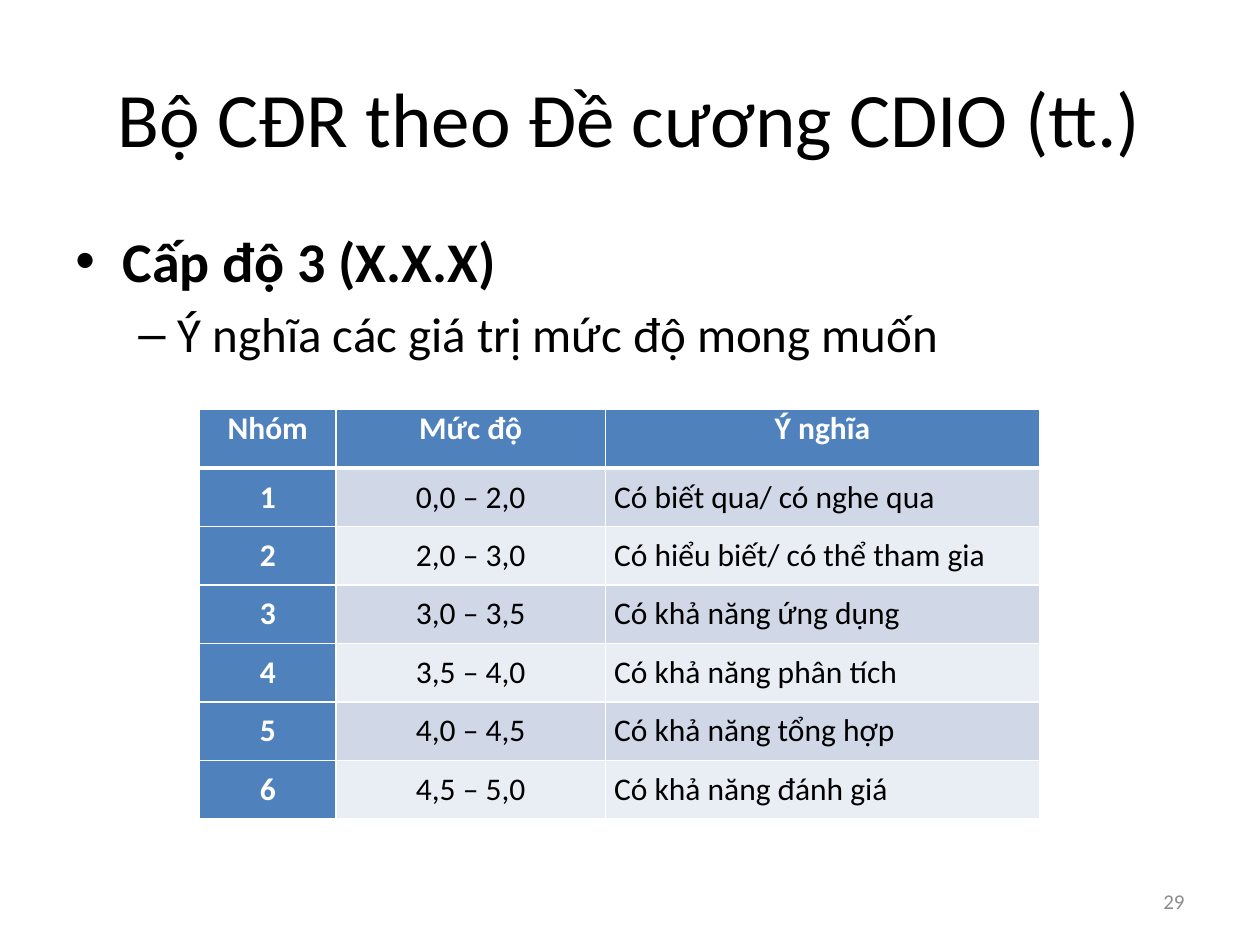
from lxml.etree import SubElement
from pptx import Presentation
from pptx.dml.color import RGBColor
from pptx.enum.text import MSO_ANCHOR as Anchor, PP_ALIGN as Align
from pptx.oxml.ns import qn
from pptx.util import Pt

COLORS = {
    "black": "000000", "white": "FFFFFF", "gray": "8C8C8C",
    "blue": "4F81BD", "odd": "D0D8E8", "even": "E9EDF4",
}


def write(paragraph, text, size, color="black", bold=False, align=Align.LEFT):
    paragraph.alignment = align
    run = paragraph.add_run()
    run.text = text
    for name, value in {"name": "Calibri", "size": Pt(size), "bold": bold}.items():
        setattr(run.font, name, value)
    run.font.color.rgb = RGBColor.from_string(COLORS[color])


def add_text_frame(left, top, width, height, anchor):
    box = slide.shapes.add_textbox(Pt(left), Pt(top), Pt(width), Pt(height))
    for name, value in {"word_wrap": True, "vertical_anchor": anchor}.items():
        setattr(box.text_frame, name, value)
    return box.text_frame


presentation = Presentation()
presentation.slide_width, presentation.slide_height = Pt(720), Pt(540)
slide = presentation.slides.add_slide(presentation.slide_layouts[6])

title = add_text_frame(36, 21.6, 648, 90, Anchor.MIDDLE)
write(title.paragraphs[0], "Bộ CĐR theo Đề cương CDIO (tt.)", 44, align=Align.CENTER)

body = add_text_frame(36, 126, 648, 356.4, Anchor.TOP)
body_lines = [
    ("Cấp độ 3 (X.X.X)", 32, True, "•", 27, -27),
    ("Ý nghĩa các giá trị mức độ mong muốn", 28, False, "–", 58.5, -22.5),
]
for level, (text, size, bold, bullet, margin, indent) in enumerate(body_lines):
    paragraph = body.add_paragraph() if level else body.paragraphs[0]
    paragraph.level = level
    paragraph.space_before = Pt(size * 0.2)
    write(paragraph, text, size, bold=bold)
    properties = paragraph._p.get_or_add_pPr()
    properties.set("marL", str(Pt(margin)))
    properties.set("indent", str(Pt(indent)))
    SubElement(properties, qn("a:buFont"), typeface="Arial")
    SubElement(properties, qn("a:buChar"), char=bullet)

rows = [
    ("Nhóm", "Mức độ", "Ý nghĩa"),
    ("1", "0,0 – 2,0", "Có biết qua/ có nghe qua"),
    ("2", "2,0 – 3,0", "Có hiểu biết/ có thể tham gia"),
    ("3", "3,0 – 3,5", "Có khả năng ứng dụng"),
    ("4", "3,5 – 4,0", "Có khả năng phân tích"),
    ("5", "4,0 – 4,5", "Có khả năng tổng hợp"),
    ("6", "4,5 – 5,0", "Có khả năng đánh giá"),
]
column_widths = [78, 154, 248]
table = slide.shapes.add_table(
    len(rows), len(column_widths), Pt(114), Pt(234), Pt(480), Pt(234)
).table
for column, width in zip(table.columns, column_widths):
    column.width = Pt(width)

for row_index, values in enumerate(rows):
    table.rows[row_index].height = Pt(234 / len(rows))
    for column_index, text in enumerate(values):
        cell = table.cell(row_index, column_index)
        is_header = row_index == 0
        is_label = is_header or column_index == 0
        cell_format = {
            "margin_left": Pt(5), "margin_right": Pt(5),
            "margin_top": 0, "margin_bottom": 0,
            "vertical_anchor": Anchor.TOP if is_header else Anchor.MIDDLE,
        }
        for name, value in cell_format.items():
            setattr(cell, name, value)
        border_widths = {
            "L": 1, "R": 1,
            "T": 3 if row_index == 1 else 1,
            "B": 3 if is_header else 1,
        }
        for side, width in border_widths.items():
            line = SubElement(cell._tc.get_or_add_tcPr(), qn(f"a:ln{side}"), w=str(Pt(width)))
            SubElement(SubElement(line, qn("a:solidFill")), qn("a:srgbClr"), val=COLORS["white"])
        band = "odd" if row_index % 2 else "even"
        cell.fill.solid()
        cell.fill.fore_color.rgb = RGBColor.from_string(COLORS["blue" if is_label else band])
        write(
            cell.text_frame.paragraphs[0], text, 18,
            color="white" if is_label else "black", bold=is_label,
            align=Align.CENTER if is_label or column_index == 1 else Align.LEFT,
        )

page_number = add_text_frame(516, 500.5, 168, 28.75, Anchor.MIDDLE)
write(page_number.paragraphs[0], "29", 12, color="gray", align=Align.RIGHT)

presentation.save("out.pptx")
